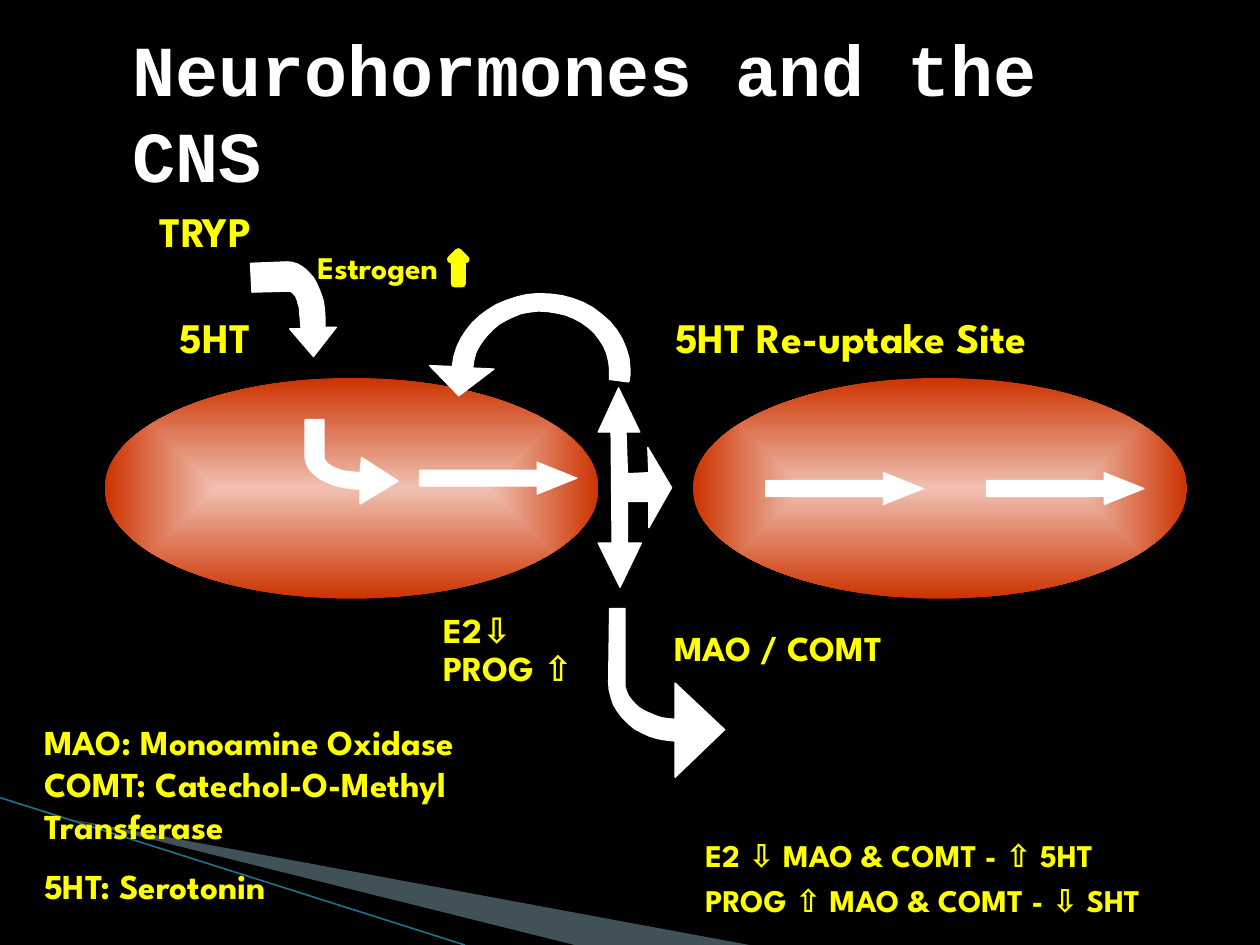
from lxml.etree import SubElement
from pptx import Presentation
from pptx.dml.color import RGBColor
from pptx.enum.shapes import MSO_CONNECTOR, MSO_SHAPE as SHAPE
from pptx.enum.text import MSO_ANCHOR as ANCHOR, MSO_AUTO_SIZE as AUTOSIZE, PP_ALIGN as ALIGN
from pptx.oxml.ns import qn
from pptx.util import Cm, Pt

BLACK = RGBColor(0x00, 0x00, 0x00)
WHITE = RGBColor(0xFF, 0xFF, 0xFF)
YELLOW = RGBColor(0xFF, 0xFF, 0x00)
ROSE = RGBColor(0xF0, 0xC1, 0xB2)
RUST = RGBColor(0xCC, 0x33, 0x00)
MIST = RGBColor(0xA0, 0xCB, 0xDC)
TEAL = RGBColor(0x1F, 0x70, 0x85)
LABEL_FONT = "League Spartan"
CURVE_STEPS = 12

TITLE = "Neurohormones and the CNS"
NEURONS = [(0.83, 3, 3.92, 1.75), (5.5, 3, 3.92, 1.75)]
SIGNALS = [(3.33, 3.67), (6.08, 3.75), (7.83, 3.75)]
SWOOSH = [(0.55, 6.5), (5.95, 7.5), (4.56, 7.5)]

# Each step is a line end (x, y) or a cubic curve (x1, y1, x2, y2, x, y).
TRYP_TO_5HT = [
    (2.49, 2.83), (2.67, 2.6), (2.58, 2.6), (2.58, 2.51),
    (2.57, 2.27, 2.44, 2.08, 2.28, 2.08), (1.99, 2.09), (2, 2.32), (2.29, 2.31),
    (2.34, 2.31, 2.38, 2.4, 2.38, 2.51), (2.39, 2.61), (2.3, 2.61)]
INTO_NEURON = [
    (3.16, 3.82), (2.86, 4), (2.86, 3.88), (2.85, 3.88),
    (2.61, 3.88, 2.42, 3.76, 2.42, 3.62), (2.42, 3.33), (2.57, 3.33), (2.57, 3.62),
    (2.57, 3.69, 2.69, 3.75, 2.85, 3.75), (2.86, 3.75), (2.87, 3.63)]
BREAKDOWN = [
    (5.75, 5.79), (5.36, 6.17), (5.36, 5.88),
    (5.07, 5.88, 4.83, 5.67, 4.83, 5.41), (4.84, 4.83), (4.96, 4.83), (4.96, 5.41),
    (4.95, 5.57, 5.14, 5.7, 5.36, 5.71), (5.36, 5.42)]
SYNAPSE = [
    (5.33, 3.87), (5.14, 3.55), (5.15, 3.75), (4.98, 3.76), (4.97, 3.43), (5.08, 3.43),
    (4.91, 3.08), (4.75, 3.43), (4.85, 3.43), (4.86, 4.31), (4.75, 4.31), (4.92, 4.66),
    (5.09, 4.31), (4.98, 4.31), (4.98, 3.98), (5.15, 3.98), (5.15, 4.19)]
REUPTAKE = [
    (3.75, 2.92), (3.77, 2.68, 4, 2.48, 4.27, 2.47), (4.58, 2.46, 4.83, 2.67, 4.84, 2.93),
    (4.84, 2.96, 4.84, 2.99, 4.84, 3.01), (4.99, 3.03), (5, 3, 5, 2.96, 5, 2.93),
    (4.99, 2.58, 4.66, 2.32, 4.27, 2.33), (3.91, 2.35, 3.62, 2.59, 3.59, 2.91),
    (3.41, 2.9), (3.64, 3.14), (3.92, 2.93)]
PATHWAYS = [TRYP_TO_5HT, INTO_NEURON, BREAKDOWN, SYNAPSE, REUPTAKE]

NOTES = [
    dict(box=(3.42, 4.92, 1.33, 0.63), size=20, spacing=0.5, gap=10, lines=["E2⇩", "PROG ⇧"]),
    dict(box=(5.25, 4.92, 2.17, 0.43), size=20, spacing=1, gap=0, lines=["MAO / COMT"]),
    dict(box=(5.5, 6.68, 4.17, 0.61), size=18, spacing=0.65, gap=11.5,
         lines=["E2 ⇩ MAO & COMT - ⇧ 5HT", "PROG ⇧ MAO & COMT - ⇩ SHT"]),
    dict(box=(0.25, 5.67, 4.17, 1.62), size=20, spacing=1, gap=10,
         lines=["MAO: Monoamine Oxidase COMT: Catechol-O-Methyl Transferase", "5HT: Serotonin"]),
    dict(box=(5.26, 2.42, 3.82, 0.5), size=24, spacing=1, gap=0, lines=["5HT Re-uptake Site"]),
    dict(box=(2.42, 1.92, 1.25, 0.4), size=18, spacing=1, gap=0, lines=["Estrogen"]),
]
STAGES = [
    (SHAPE.FLOWCHART_PUNCHED_TAPE, (0.92, 1.5, 1.42, 0.67), "TRYP"),
    (SHAPE.FLOWCHART_TERMINATOR, (1.17, 2.42, 1.08, 0.5), "5HT"),
]


def lengths(values):
    return [Cm(round(value * 2.54, 2)) for value in values]


def style(paragraph, size, colour, name=LABEL_FONT):
    for attribute, value in dict(size=Pt(size), name=name, bold=True).items():
        setattr(paragraph.font, attribute, value)
    paragraph.font.color.rgb = colour


def paint(shape, colour, edge=None, width=0.75):
    shape.shadow.inherit = False
    shape.fill.solid()
    shape.fill.fore_color.rgb = colour
    if edge is None:
        shape.line.fill.background()
    else:
        shape.line.color.rgb = edge
        shape.line.width = Pt(width)


def flatten(steps):
    points = []
    for step in steps:
        if len(step) == 2:
            points.append(step)
            continue
        start, first, second, end = points[-1], step[:2], step[2:4], step[4:]
        for index in range(1, CURVE_STEPS + 1):
            t = index / CURVE_STEPS
            u = 1 - t
            points.append(tuple(
                u**3 * a + 3 * u * u * t * b + 3 * u * t * t * c + t**3 * d
                for a, b, c, d in zip(start, first, second, end)))
    return points


def add_outline(shapes, steps):
    points = [lengths(point) for point in flatten(steps)]
    builder = shapes.build_freeform(*points[0])
    builder.add_line_segments(points[1:], close=True)
    return builder.convert_to_shape()


def add_backdrop(slide):
    slide.background.fill.solid()
    slide.background.fill.fore_color.rgb = BLACK
    swoosh = add_outline(slide.shapes, SWOOSH)
    paint(swoosh, MIST)
    tint = swoosh.element.spPr.find(qn("a:solidFill"))[0]
    SubElement(tint, qn("a:alpha")).set("val", "40000")
    streak = slide.shapes.add_connector(MSO_CONNECTOR.STRAIGHT, *lengths((0, 6.33, 3.69, 7.5)))
    streak.line.color.rgb = TEAL
    streak.line.width = Pt(0.95)
    SubElement(streak.element.spPr, qn("a:effectLst"))


def add_title(slide):
    title = slide.shapes.title
    title.left, title.top, title.width, title.height = lengths((0.42, 0.42, 8.83, 0.92))
    frame = title.text_frame
    frame.text = TITLE
    for attribute, value in dict(
            word_wrap=True, auto_size=AUTOSIZE.NONE, vertical_anchor=ANCHOR.MIDDLE).items():
        setattr(frame, attribute, value)
    heading = frame.paragraphs[0]
    heading.alignment = ALIGN.LEFT
    heading.line_spacing = 1.0
    properties = heading._p.get_or_add_pPr()
    properties.set("marL", str(Cm(1.35)))
    properties.set("indent", "0")
    style(heading, 41, WHITE, "Courier New")


def add_neuron(shapes, box):
    neuron = shapes.add_shape(SHAPE.OVAL, *lengths(box))
    neuron.shadow.inherit = False
    neuron.line.fill.background()
    neuron.fill.gradient()
    for stop, colour in zip(neuron.fill.gradient_stops, (ROSE, RUST)):
        stop.color.rgb = colour
    gradient = neuron.element.spPr.find(qn("a:gradFill"))
    gradient.remove(gradient.find(qn("a:lin")))
    glow = SubElement(gradient, qn("a:path"))
    glow.set("path", "shape")
    centre = SubElement(glow, qn("a:fillToRect"))
    for side in "ltrb":
        centre.set(side, "50000")


def add_note(shapes, box, size, spacing, gap, lines):
    frame = shapes.add_textbox(*lengths(box)).text_frame
    frame.word_wrap = True
    for index, line in enumerate(lines):
        paragraph = frame.add_paragraph() if index else frame.paragraphs[0]
        paragraph.text = line
        paragraph.line_spacing = spacing
        paragraph.space_before = Pt(gap if index else 0)
        style(paragraph, size, YELLOW)


def add_stage(shapes, kind, box, label):
    stage = shapes.add_shape(kind, *lengths(box))
    stage.shadow.inherit = False
    stage.fill.background()
    stage.line.fill.background()
    frame = stage.text_frame
    frame.text = label
    frame.word_wrap = False
    frame.vertical_anchor = ANCHOR.MIDDLE
    frame.paragraphs[0].alignment = ALIGN.CENTER
    style(frame.paragraphs[0], 24, YELLOW)


def main():
    deck = Presentation()
    deck.slide_width, deck.slide_height = Cm(25.4), Cm(19.05)
    slide = deck.slides.add_slide(deck.slide_layouts[5])
    shapes = slide.shapes
    add_backdrop(slide)
    add_title(slide)
    for box in NEURONS:
        add_neuron(shapes, box)
    for steps in PATHWAYS:
        paint(add_outline(shapes, steps), WHITE, WHITE)
    for corner in SIGNALS:
        signal = shapes.add_shape(SHAPE.RIGHT_ARROW, *lengths((*corner, 1.25, 0.25)))
        signal.adjustments[0], signal.adjustments[1] = 0.5, 1.25
        paint(signal, WHITE, WHITE)
    for note in NOTES:
        add_note(shapes, **note)
    for stage in STAGES:
        add_stage(shapes, *stage)
    rise = shapes.add_shape(SHAPE.UP_ARROW, *lengths((3.58, 2, 0.12, 0.25)))
    paint(rise, YELLOW, YELLOW, 4.33)
    deck.save("out.pptx")


if __name__ == "__main__":
    main()
